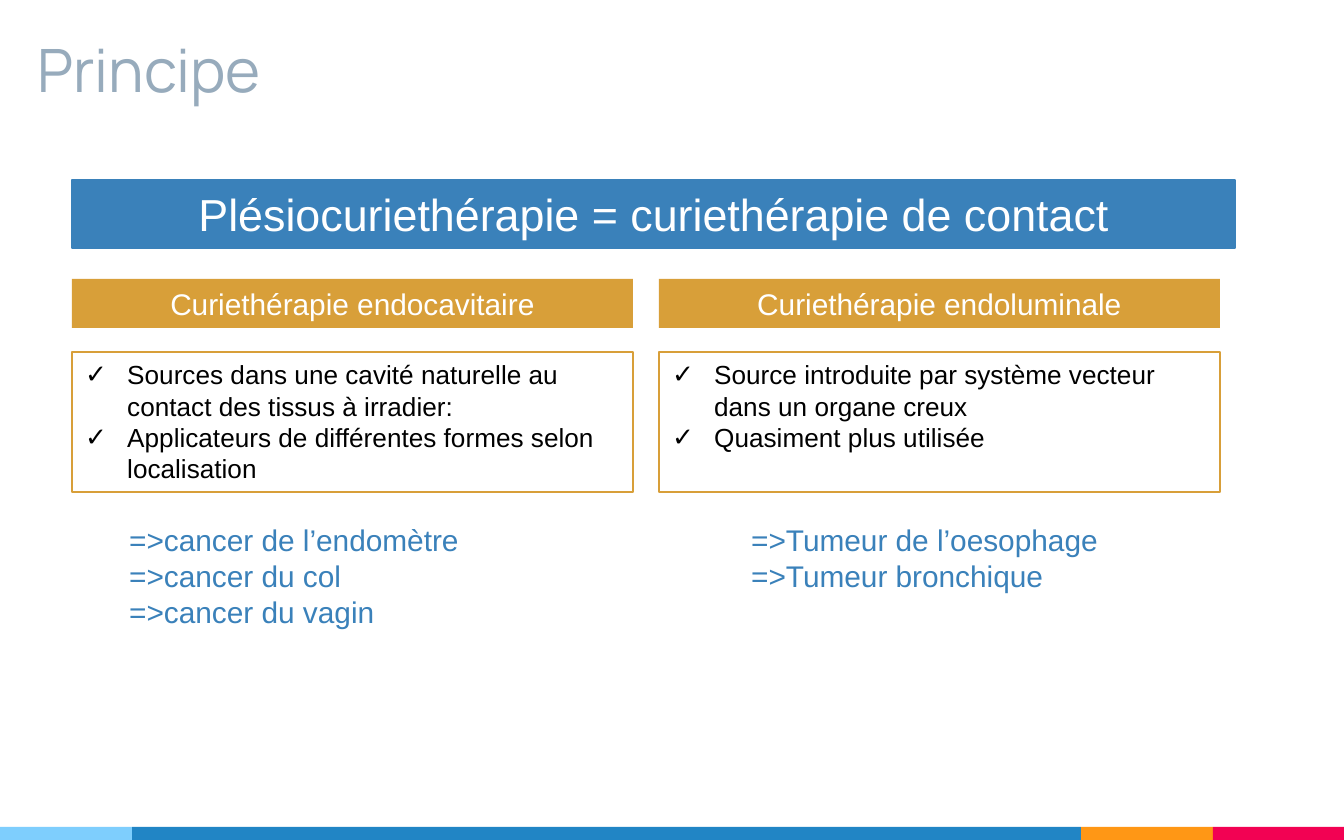
from lxml.etree import SubElement
from pptx import Presentation
from pptx.dml.color import RGBColor
from pptx.enum.shapes import MSO_SHAPE
from pptx.enum.text import MSO_ANCHOR, PP_ALIGN
from pptx.oxml.ns import qn
from pptx.util import Pt

EMU_PER_PX = 914400 / 134.4
WIDTH, HEIGHT = 1344, 840

SKY = RGBColor(0x7E, 0xCE, 0xFD)
OCEAN = RGBColor(0x21, 0x85, 0xC5)
ORANGE = RGBColor(0xFF, 0x97, 0x15)
PINK = RGBColor(0xF2, 0x02, 0x53)
SLATE = RGBColor(0x97, 0xAB, 0xBC)
BLUE = RGBColor(0x3A, 0x81, 0xBA)
GOLD = RGBColor(0xD8, 0x9F, 0x39)
WHITE = RGBColor(0xFF, 0xFF, 0xFF)
BLACK = RGBColor(0, 0, 0)


def px(length):
    return round(length * EMU_PER_PX)


class SlideBuilder:
    def __init__(self, slide, font="Arial"):
        self.slide = slide
        self.font = font

    def rectangle(self, box, fill=None, line=None):
        shape = self.slide.shapes.add_shape(MSO_SHAPE.RECTANGLE, *map(px, box))
        shape.shadow.inherit = False
        if fill is None:
            shape.fill.background()
        else:
            shape.fill.solid()
            shape.fill.fore_color.rgb = fill
        if line is None:
            shape.line.fill.background()
        else:
            shape.line.color.rgb = line
            shape.line.width = Pt(0.75)
        return shape

    def set_text(self, shape, lines, size, color, align=PP_ALIGN.LEFT, font=None, bullet=None):
        frame = shape.text_frame
        frame.word_wrap = True
        frame.vertical_anchor = MSO_ANCHOR.TOP
        frame.text = "\n".join(lines)
        for paragraph in frame.paragraphs:
            paragraph.alignment = align
            if bullet:
                self.add_bullet(paragraph, bullet)
            for run in paragraph.runs:
                run.font.name = font or self.font
                run.font.size = Pt(size)
                run.font.color.rgb = color

    def add_bullet(self, paragraph, character, indent=42):
        properties = paragraph._p.get_or_add_pPr()
        properties.set("marL", str(px(indent)))
        properties.set("indent", str(-px(indent)))
        SubElement(properties, qn("a:buFont"), typeface=self.font)
        SubElement(properties, qn("a:buChar"), char=character)

    def text(self, box, lines, size, color, font=None):
        shape = self.slide.shapes.add_textbox(*map(px, box))
        self.set_text(shape, lines, size, color, font=font)
        return shape

    def title(self, box, text):
        frame = self.text(box, [text], 32, SLATE, font="Manrope").text_frame
        frame.vertical_anchor = MSO_ANCHOR.BOTTOM
        frame.margin_top = frame.margin_bottom = px(13)

    def banner(self, box, text, size, fill, line=None):
        shape = self.rectangle(box, fill, line)
        self.set_text(shape, [text], size, WHITE, PP_ALIGN.CENTER)

    def checklist(self, box, items):
        shape = self.rectangle(box, line=GOLD)
        self.set_text(shape, items, 14, BLACK, bullet="✓")

    def footer(self, top, bands):
        left = 0
        for width, color in bands:
            self.rectangle((left, top, width, HEIGHT - top), color)
            left += width


def main():
    presentation = Presentation()
    presentation.slide_width = px(WIDTH)
    presentation.slide_height = px(HEIGHT)
    builder = SlideBuilder(presentation.slides.add_slide(presentation.slide_layouts[6]))

    builder.footer(827, [(132, SKY), (949, OCEAN), (132, ORANGE), (131, PINK)])
    builder.title((24, 36, 950, 82), "Principe")
    builder.banner((72, 180, 1163, 68), "Plésiocuriethérapie = curiethérapie de contact",
                   24, BLUE, BLUE)

    columns = [
        (72, 116, "Curiethérapie endocavitaire",
         ["Sources dans une cavité naturelle au contact des tissus à irradier:",
          "Applicateurs de différentes formes selon localisation"],
         ["=>cancer de l’endomètre", "=>cancer du col", "=>cancer du vagin"]),
        (659, 738, "Curiethérapie endoluminale",
         ["Source introduite par système vecteur dans un organe creux",
          "Quasiment plus utilisée"],
         ["=>Tumeur de l’oesophage", "=>Tumeur bronchique"]),
    ]
    for left, examples_left, heading, items, examples in columns:
        builder.banner((left, 279, 561, 49), heading, 16, GOLD)
        builder.checklist((left, 352, 561, 140), items)
        builder.text((examples_left, 515, 473, 14 + 36 * len(examples)), examples, 16, BLUE)

    presentation.save("out.pptx")


if __name__ == "__main__":
    main()
